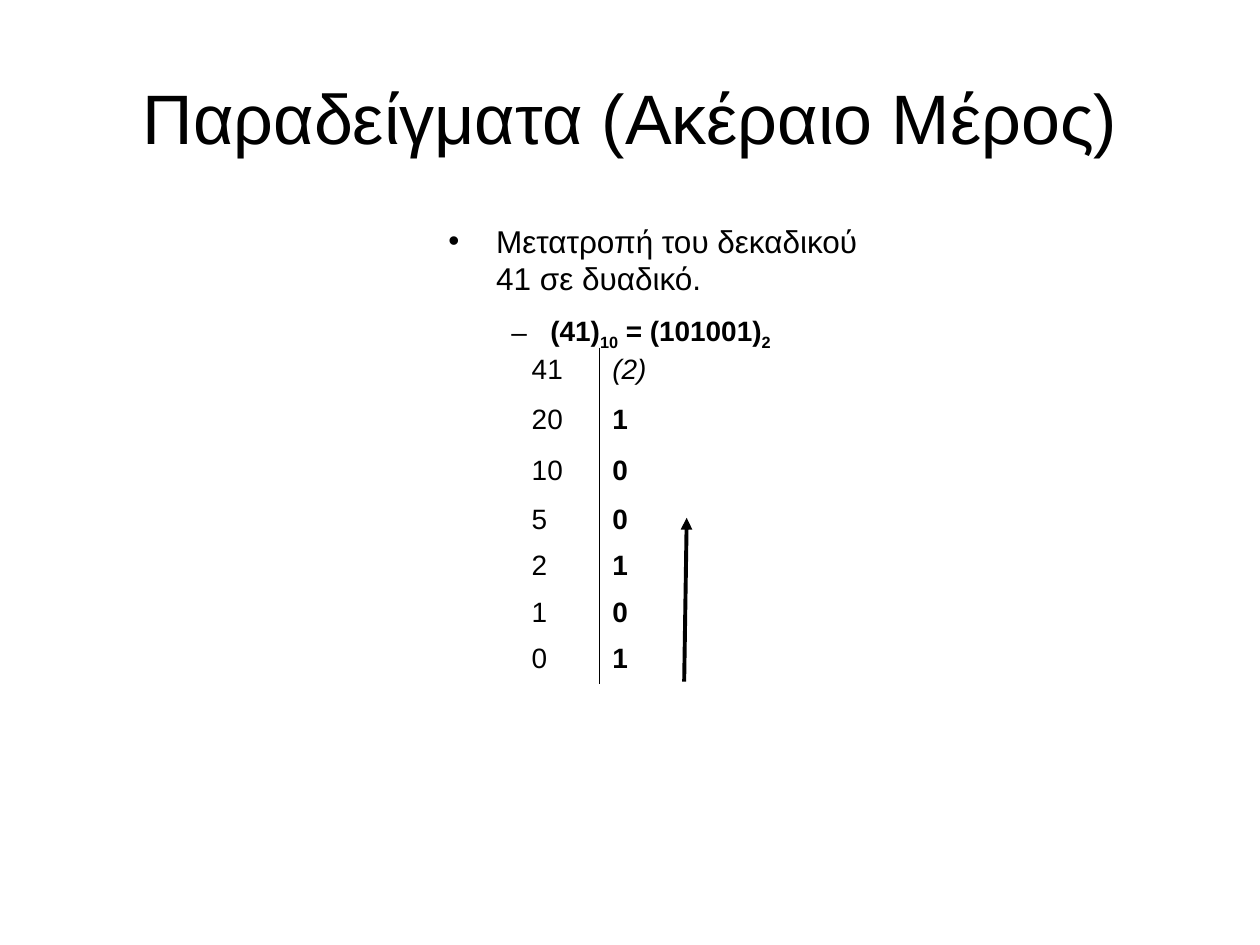
from typing import NamedTuple

from lxml.etree import SubElement
from pptx import Presentation
from pptx.dml.color import RGBColor
from pptx.enum.shapes import MSO_CONNECTOR
from pptx.enum.text import MSO_ANCHOR, MSO_AUTO_SIZE, PP_ALIGN
from pptx.oxml import parse_xml
from pptx.oxml.ns import nsdecls, qn
from pptx.util import Pt

PX = 9144  # 100 px to the inch
INK = {"text": "000000", "line": "000000"}
FONT = "Arial"


class Step(NamedTuple):
    quot: str
    rem: str
    high: int


STEPS = [
    Step("41", "(2)", 40),
    Step("20", "1", 40),
    Step("10", "0", 39),
    Step("5", "0", 37),
    Step("2", "1", 37),
    Step("1", "0", 37),
    Step("0", "1", 37),
]
COLS = [64, 57]


def box(*vals: int) -> list[int]:
    return [val * PX for val in vals]


def put(para, text: str, size: int = 16, bold: bool = False,
        ital: bool = False, sub: bool = False) -> None:
    """Add one run of text with its format."""
    run = para.add_run()
    run.text = text
    font = run.font
    font.name, font.size = FONT, Pt(size)
    font.bold, font.italic = bold, ital
    font.color.rgb = RGBColor.from_string(INK["text"])
    if sub:
        run._r.get_or_add_rPr().set("baseline", "-25000")


def mark(para, sign: str, left: int, hang: int) -> None:
    """Give a paragraph a bullet with a hanging indent."""
    props = para._p.get_or_add_pPr()
    props.set("marL", str(left * PX))
    props.set("indent", str(-hang * PX))
    SubElement(props, qn("a:buFont")).set("typeface", FONT)
    SubElement(props, qn("a:buChar")).set("char", sign)


def edge(cell, side: str) -> None:
    """Draw one side of a table cell."""
    cell._tc.get_or_add_tcPr().insert(0, parse_xml(
        f'<a:{side} {nsdecls("a")} w="{Pt(1)}"><a:solidFill>'
        f'<a:srgbClr val="{INK["line"]}"/></a:solidFill></a:{side}>'))


def head(slide) -> None:
    title = slide.shapes.title
    title.left, title.top, title.width, title.height = box(50, 30, 900, 125)
    frame = title.text_frame
    frame.auto_size = MSO_AUTO_SIZE.NONE
    frame.vertical_anchor = MSO_ANCHOR.MIDDLE
    para = frame.paragraphs[0]
    para.alignment = PP_ALIGN.CENTER
    put(para, "Παραδείγματα (Ακέραιο Μέρος)", size=40)


def body(slide) -> None:
    frame = slide.shapes.add_textbox(*box(346, 171, 375, 542)).text_frame
    frame.word_wrap = True
    para = frame.paragraphs[0]
    mark(para, "•", 38, 38)
    put(para, "Μετατροπή του δεκαδικού 41 σε δυαδικό.", size=18)
    para = frame.add_paragraph()
    para.level = 1
    mark(para, "–", 81, 31)
    para.line_spacing, para.space_before = 1.2, Pt(5)
    for text, sub in [("(41)", False), ("10", True),
                      (" = (101001)", False), ("2", True)]:
        put(para, text, bold=True, sub=sub)


def grid(slide) -> None:
    high = sum(step.high for step in STEPS)
    frame = slide.shapes.add_table(
        len(STEPS), len(COLS), *box(412, 276, sum(COLS), high))
    table = frame.table
    table.first_row = table.horz_banding = False
    for col, wide in zip(table.columns, COLS):
        col.width = wide * PX
    for num, (row, step) in enumerate(zip(table.rows, STEPS)):
        row.height = step.high * PX
        left, right = row.cells
        for cell in (left, right):
            cell.fill.background()
        put(left.text_frame.paragraphs[0], step.quot)
        put(right.text_frame.paragraphs[0], step.rem,
            bold=num > 0, ital=num == 0)
        edge(left, "lnR")
        edge(right, "lnL")
    # Plain style without a grid
    style = table._tbl.tblPr.find(qn("a:tableStyleId"))
    style.text = "{2D5ABB26-0587-4C30-8999-92F81FD0307C}"


def arrow(slide) -> None:
    line = slide.shapes.add_connector(
        MSO_CONNECTOR.STRAIGHT, *box(543, 541, 545, 411))
    line.line.width = Pt(2.25)
    line.line.color.rgb = RGBColor.from_string(INK["line"])
    SubElement(line.line._get_or_add_ln(), qn("a:tailEnd")).set(
        "type", "triangle")
    SubElement(line._element.spPr, qn("a:effectLst"))


def main() -> None:
    deck = Presentation()
    deck.slide_width, deck.slide_height = box(1000, 750)
    slide = deck.slides.add_slide(deck.slide_layouts[5])
    head(slide)
    body(slide)
    grid(slide)
    # Remainders are read upwards
    arrow(slide)
    deck.save("out.pptx")


if __name__ == "__main__":
    main()
